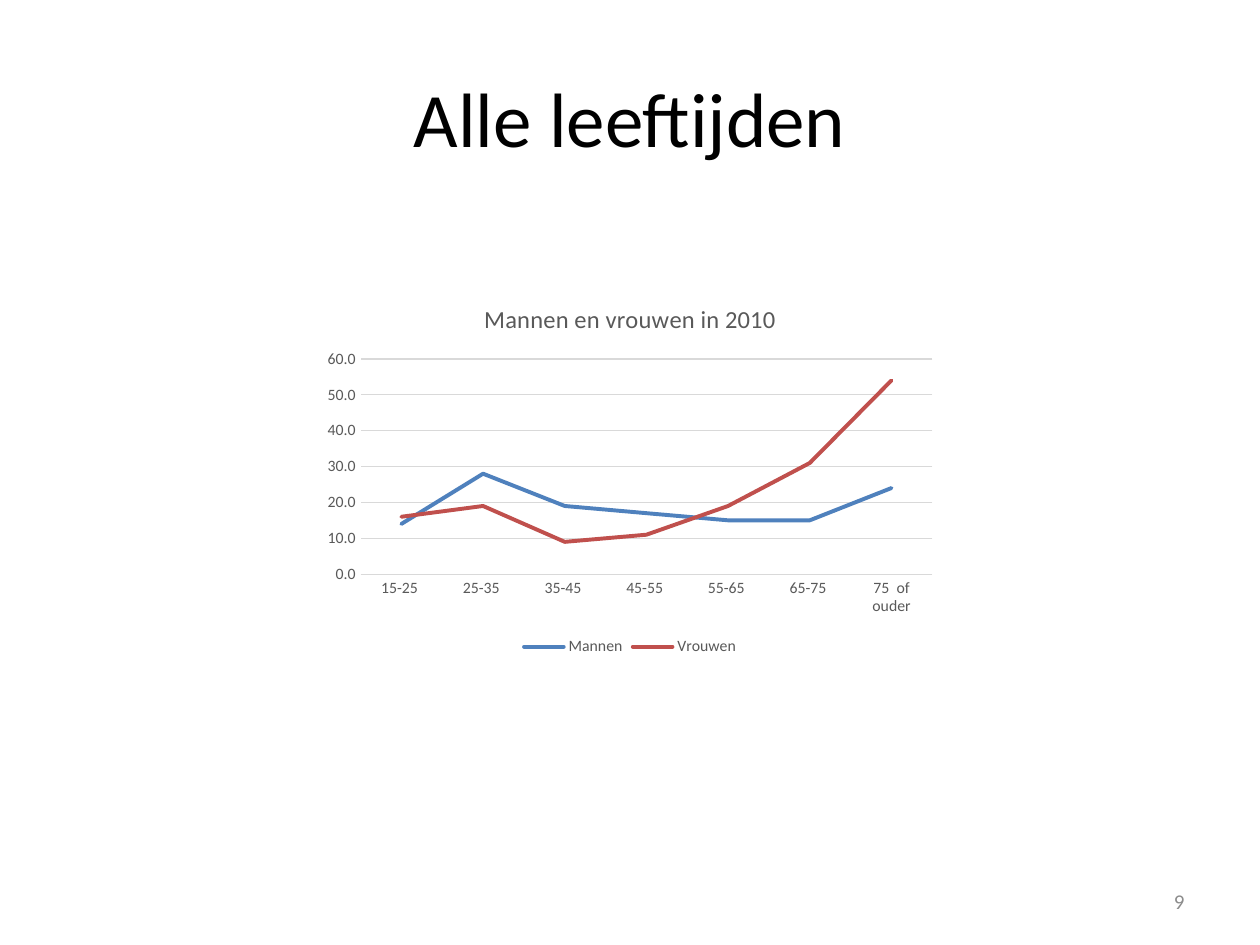
from pptx import Presentation, util as u
from pptx.chart.data import CategoryChartData
from pptx.dml.color import RGBColor
from pptx.enum import chart as ch, text

PX = 914400 // 126
FONT = "Calibri"
GREY, GRID = "595959", "D9D9D9"

HEADING = ("Alle leeftijden", (63, 38, 1134, 157), 44, "000000", text.PP_ALIGN.CENTER)
PAGE_NUMBER = ("9", (903, 876, 294, 50), 12, "8C8C8C", text.PP_ALIGN.RIGHT)

CHART_BOX = (315, 283, 630, 378)
CHART_TITLE = "Mannen en vrouwen in 2010"
AGES = ["15-25 ", "25-35 ", "35-45 ", "45-55 ", "55-65 ", "65-75 ", "75  of ouder"]
SERIES = [
    ("Mannen", "4F81BD", [14, 28, 19, 17, 15, 15, 24]),
    ("Vrouwen", "C0504D", [16, 19, 9, 11, 19, 31, 54]),
]


def emu(box):
    return [length * PX for length in box]


def style_font(font, size, color):
    font.name = FONT
    font.size = u.Pt(size)
    font.bold = False
    font.color.rgb = RGBColor.from_string(color)


def style_line(line, color, width):
    line.color.rgb = RGBColor.from_string(color)
    line.width = u.Pt(width)


def add_text(slide, words, box, size, color, align):
    frame = slide.shapes.add_textbox(*emu(box)).text_frame
    frame.word_wrap = True
    frame.vertical_anchor = text.MSO_ANCHOR.MIDDLE
    paragraph = frame.paragraphs[0]
    paragraph.alignment = align
    run = paragraph.add_run()
    run.text = words
    style_font(run.font, size, color)


def add_age_chart(slide):
    data = CategoryChartData(number_format="0.0")
    data.categories = AGES
    for name, _, values in SERIES:
        data.add_series(name, values)
    chart = slide.shapes.add_chart(ch.XL_CHART_TYPE.LINE, *emu(CHART_BOX), data).chart
    style_font(chart.font, 10, "000000")

    chart.has_title = True
    title = chart.chart_title
    title.include_in_layout = False
    run = title.text_frame.paragraphs[0].add_run()
    run.text = CHART_TITLE
    style_font(run.font, 14, GREY)

    chart.has_legend = True
    chart.legend.position = ch.XL_LEGEND_POSITION.BOTTOM
    chart.legend.include_in_layout = False
    style_font(chart.legend.font, 9, GREY)

    ages, percentages = chart.category_axis, chart.value_axis
    for axis in (ages, percentages):
        axis.major_tick_mark = axis.minor_tick_mark = ch.XL_TICK_MARK.NONE
        style_font(axis.tick_labels.font, 9, GREY)
    style_line(ages.format.line, GRID, 0.75)
    percentages.format.line.fill.background()
    percentages.minimum_scale, percentages.maximum_scale = 0, 60
    percentages.major_unit = 10
    percentages.tick_labels.number_format = "0.0"
    percentages.tick_labels.number_format_is_linked = False
    percentages.has_major_gridlines = True
    style_line(percentages.major_gridlines.format.line, GRID, 0.75)

    plot = chart.plots[0]
    plot.vary_by_categories = False
    for series, (_, color, _) in zip(plot.series, SERIES):
        series.smooth = False
        series.marker.style = ch.XL_MARKER_STYLE.NONE
        style_line(series.format.line, color, 2.25)
        series._element.xpath("c:spPr/a:ln")[0].set("cap", "rnd")


def main():
    deck = Presentation()
    deck.slide_width, deck.slide_height = emu((1260, 945))
    slide = deck.slides.add_slide(deck.slide_layouts[6])
    add_text(slide, *HEADING)
    add_text(slide, *PAGE_NUMBER)
    add_age_chart(slide)
    deck.save("out.pptx")


if __name__ == "__main__":
    main()
